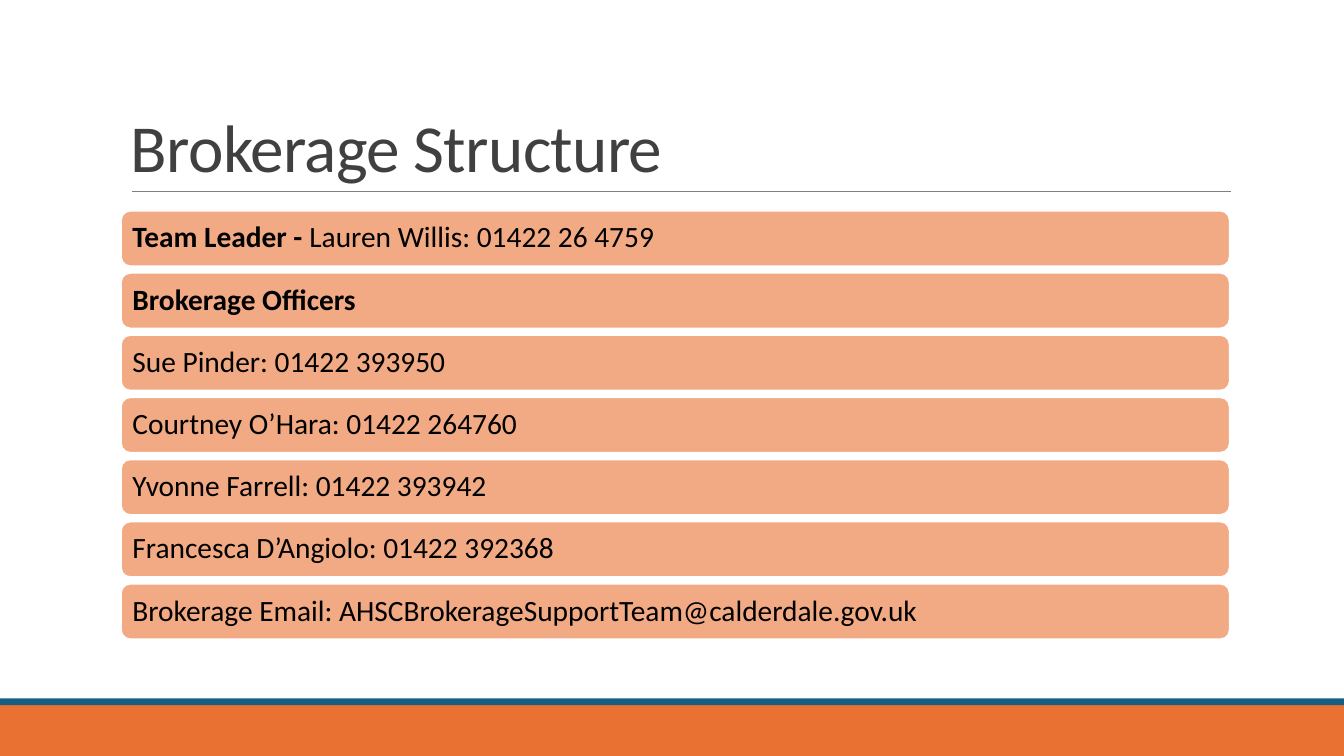
from lxml import etree
from pptx import Presentation
from pptx.dml.color import RGBColor
from pptx.enum.shapes import MSO_CONNECTOR as CONN, MSO_SHAPE as SHAPE
from pptx.enum.text import MSO_ANCHOR as ANCHOR, PP_ALIGN as ALIGN
from pptx.oxml.ns import qn
from pptx.util import Cm, Pt

W, H = 33.87, 19.05
COLORS = {
    "title": "404040", "text": "000000", "rule": "808080", "row": "F2AA84",
    "edge": "FFFFFF", "band": "E97132", "strip": "156082",
}
# Each row is a list of (text, bold) runs
ROWS = [
    [("Team Leader - ", True), ("Lauren Willis: 01422 26 4759", False)],
    [("Brokerage Officers", True)],
    [("Sue Pinder: 01422 393950", False)],
    [("Courtney O’Hara: 01422 264760", False)],
    [("Yvonne Farrell: 01422 393942", False)],
    [("Francesca D’Angiolo: 01422 392368", False)],
    [("Brokerage Email: AHSCBrokerageSupportTeam@calderdale.gov.uk", False)],
]


def rgb(name):
    return RGBColor.from_string(COLORS[name])


def add_text(p, text, size=21, color="text", bold=False, spacing=None):
    r = p.add_run()
    r.text = text
    r.font.name = "Calibri"
    r.font.size = Pt(size)
    r.font.bold = bold
    r.font.color.rgb = rgb(color)
    if spacing is not None:
        r._r.get_or_add_rPr().set("spc", str(round(spacing * 100)))


def add_box(s, kind, x, y, w, h, fill, edge=None):
    sp = s.shapes.add_shape(kind, Cm(x), Cm(y), Cm(w), Cm(h))
    sp.shadow.inherit = False
    sp.fill.solid()
    sp.fill.fore_color.rgb = rgb(fill)
    if edge:
        sp.line.color.rgb = rgb(edge)
        sp.line.width = Pt(1.25)
    else:
        sp.line.fill.background()
    return sp


def add_footer(s, x, y, w, h):
    strip = 0.17
    add_box(s, SHAPE.RECTANGLE, x, y + strip, w, h - strip, "band")
    add_box(s, SHAPE.RECTANGLE, x, y, w, strip, "strip")


def add_title(s, x, y, w, h, text):
    # Rule under the title
    line = s.shapes.add_connector(
        CONN.STRAIGHT, Cm(x + 0.28), Cm(y + h), Cm(x + w + 0.02), Cm(y + h))
    line.line.color.rgb = rgb("rule")
    line.line.width = Pt(0.5)
    etree.SubElement(line._element.spPr, qn("a:effectLst"))

    # Title text
    tf = s.shapes.add_textbox(Cm(x), Cm(y), Cm(w), Cm(h)).text_frame
    tf.word_wrap = True
    tf.vertical_anchor = ANCHOR.BOTTOM
    p = tf.paragraphs[0]
    p.line_spacing = 0.85
    add_text(p, text, size=48, color="title", spacing=-0.5)


def add_rows(s, x, y, w, h, rows, row_h=1.4):
    pitch = (h - row_h) / (len(rows) - 1)
    for i, runs in enumerate(rows):
        sp = add_box(s, SHAPE.ROUNDED_RECTANGLE, x, y + i * pitch, w, row_h,
                     "row", edge="edge")
        tf = sp.text_frame
        tf.word_wrap = True
        tf.vertical_anchor = ANCHOR.MIDDLE
        tf.margin_left = tf.margin_right = Cm(0.22)
        p = tf.paragraphs[0]
        p.alignment = ALIGN.LEFT
        p.line_spacing = 0.9
        for text, bold in runs:
            add_text(p, text, bold=bold)


def main():
    prs = Presentation()
    prs.slide_width, prs.slide_height = Cm(W), Cm(H)
    s = prs.slides.add_slide(prs.slide_layouts[6])
    add_footer(s, 0, 17.6, W, H - 17.6)
    add_title(s, 3.05, 0.79, 27.94, 4.03, "Brokerage Structure")
    add_rows(s, 3.05, 5.31, 27.94, 10.8, ROWS)
    prs.save("out.pptx")


if __name__ == "__main__":
    main()
